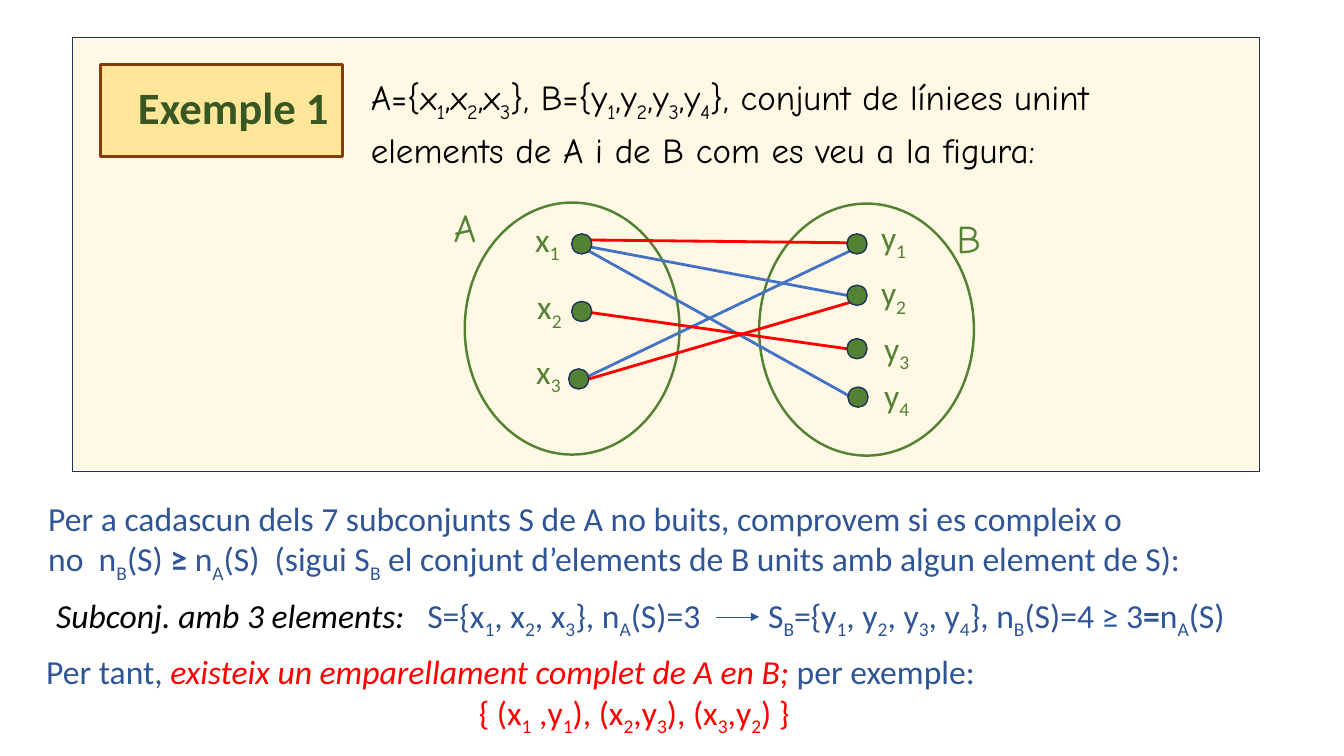
from lxml import etree
from pptx import Presentation
from pptx.dml.color import RGBColor
from pptx.enum.shapes import MSO_CONNECTOR as Conn, MSO_SHAPE as Kind
from pptx.enum.text import MSO_ANCHOR as Anchor, MSO_AUTO_SIZE as Fit, PP_ALIGN as Align
from pptx.oxml.ns import qn
from pptx.util import Pt

PX = 9144
BLACK = RGBColor(0x00, 0x00, 0x00)
RED = RGBColor(0xFF, 0x00, 0x00)
BLUE = RGBColor(0x44, 0x72, 0xC4)
NAVY = RGBColor(0x1E, 0x32, 0x56)
INK = RGBColor(0x2F, 0x55, 0x97)
GREEN = RGBColor(0x54, 0x82, 0x35)
DARK = RGBColor(0x38, 0x57, 0x23)
CREAM = RGBColor(0xFF, 0xF2, 0xCC)
GOLD = RGBColor(0xFF, 0xE6, 0x99)
BROWN = RGBColor(0x84, 0x3C, 0x0B)

BODY = {"name": "Calibri", "size": Pt(24)}
PLAIN = {**BODY, "color": INK}
SLANT = {**BODY, "color": BLACK, "italic": True}
BOLD = {**PLAIN, "bold": True}
PROOF = {**BODY, "color": RED}
CLAIM = {**PROOF, "italic": True}
MARK = {**BODY, "color": GREEN}
NAME = {"name": "Comic Neue", "size": Pt(28), "color": GREEN}
TASK = {"name": "Comic Neue", "size": Pt(25), "color": BLACK}
HEAD = {"name": "Calibri", "size": Pt(32), "color": DARK, "bold": True}


def emu(*nums):
    """Turn px lengths into EMU."""
    return [round(n * PX) for n in nums]


def add_run(para, text, form, base=0):
    """Add one run with its format."""
    if not text:
        return
    run = para.add_run()
    run.text = text
    for key, val in form.items():
        if key == "color":
            run.font.color.rgb = val
        else:
            setattr(run.font, key, val)
    if base:
        run.font._element.set("baseline", str(base))


def add_rich(para, parts):
    """Write (text, format) parts; the sign after each underscore is lowered."""
    for text, form in parts:
        first, *rest = text.split("_")
        add_run(para, first, form)
        for bit in rest:
            add_run(para, bit[0], form, -25000)
            add_run(para, bit[1:], form)


def add_text(slide, box, paras, wrap=True, fit=Fit.SHAPE_TO_FIT_TEXT):
    """Place a text box and return its paragraphs."""
    frame = slide.shapes.add_textbox(*emu(*box)).text_frame
    frame.word_wrap = wrap
    frame.auto_size = fit
    for num, parts in enumerate(paras):
        para = frame.add_paragraph() if num else frame.paragraphs[0]
        add_rich(para, parts)
    return frame.paragraphs


def indent(para, left):
    """Set the left indent of a paragraph."""
    para._p.get_or_add_pPr().set("marL", str(left * PX))


def add_tabs(para, stops):
    """Set the tab stops of a paragraph."""
    tabs = etree.SubElement(para._p.get_or_add_pPr(), qn("a:tabLst"))
    for stop in stops:
        etree.SubElement(tabs, qn("a:tab"), pos=str(stop * PX), algn="l")


def add_form(slide, kind, box, fill, line, width):
    """Draw a preset shape."""
    form = slide.shapes.add_shape(kind, *emu(*box))
    form.shadow.inherit = False
    if fill is None:
        form.fill.background()
    else:
        form.fill.solid()
        form.fill.fore_color.rgb = fill
    form.line.color.rgb = line
    form.line.width = Pt(width)
    return form


def add_line(slide, ends, color, width, arrow=False):
    """Draw a straight line, with an arrowhead if asked."""
    line = slide.shapes.add_connector(Conn.STRAIGHT, *emu(*ends))
    line.line.color.rgb = color
    line.line.width = Pt(width)
    if arrow:
        etree.SubElement(line.line._get_or_add_ln(), qn("a:tailEnd"), type="triangle")
    etree.SubElement(line._element.spPr, qn("a:effectLst"))


def add_title(slide, box):
    """Draw the title plate."""
    plate = add_form(slide, Kind.RECTANGLE, box, GOLD, BROWN, 2)
    frame = plate.text_frame
    frame.vertical_anchor = Anchor.MIDDLE
    para = frame.paragraphs[0]
    para.alignment = Align.LEFT
    para.line_spacing = 0.9
    indent(para, 27)
    add_rich(para, [("Exemple 1", HEAD)])


def add_task(slide, box):
    """Write the statement of the example."""
    paras = [
        [("A={x_1,x_2,x_3}, B={y_1,y_2,y_3,y_4}, conjunt de líniees unint", TASK)],
        [("elements de A i de B com es veu a la figura:", TASK)],
    ]
    for para in add_text(slide, box, paras, fit=Fit.NONE):
        para.line_spacing = 0.9
        para.space_before = Pt(10)


def add_graph(slide, box):
    """Draw the two sets and the lines between them."""
    left, top = box[:2]
    sets = [
        ("A", (0, 0), (21, 4), "x", [(137, 45), (137, 112), (134, 179)],
         [(81, 15), (83, 82), (82, 146)]),
        ("B", (499, 11), (313, 5), "y", [(410, 45), (410, 96), (410, 149), (411, 197)],
         [(424, 13), (424, 68), (427, 123), (427, 170)]),
    ]
    edges = [
        (137, 41, 416, 44, RED), (140, 47, 400, 96, BLUE), (144, 52, 417, 204, BLUE),
        (140, 178, 403, 52, BLUE), (144, 179, 403, 103, RED), (138, 112, 400, 149, RED),
    ]
    for name, spot, oval, sign, dots, marks in sets:
        add_form(slide, Kind.OVAL, (left + oval[0], top + oval[1], 213, 250), None, GREEN, 1.75)
        add_text(slide, (left + spot[0], top + spot[1], 47, 57), [[(name, NAME)]], False)
        for num, (x, y) in enumerate(marks, 1):
            add_text(slide, (left + x, top + y, 46, 50), [[(f"{sign}_{num}", MARK)]], False)
    for x, y, far, low, color in edges:
        add_line(slide, (left + x, top + y, left + far, top + low), color, 2)
    for *_, dots, marks in sets:
        for x, y in dots:
            add_form(slide, Kind.OVAL, (left + x - 10, top + y - 10, 20, 20), GREEN, NAVY, 1)


def add_panel(slide, box):
    """Draw the example panel with its parts."""
    left, top = box[:2]
    panel = add_form(slide, Kind.RECTANGLE, box, CREAM, NAVY, 1)
    tint = panel._element.spPr.find(qn("a:solidFill"))[0]
    etree.SubElement(tint, qn("a:alpha"), val="50000")
    add_graph(slide, (left + 368, top + 160, 544, 255))
    add_title(slide, (left + 28, top + 27, 240, 91))
    add_task(slide, (left + 286, top + 34, 903, 124))


def add_notes(slide, box):
    """Write the check and the result below the panel."""
    left, top, wide = box[:3]
    check = [
        [("Per a cadascun dels 7 subconjunts S de A no buits, comprovem si es compleix o", PLAIN)],
        [("no  n_B(S) ", PLAIN), ("≥ ", BOLD),
         ("n_A(S)  (sigui S_B el conjunt d’elements de B units amb algun element de S):", PLAIN)],
    ]
    for para in add_text(slide, (left, top, wide, 91), check):
        indent(para, 8)
    case = [[
        ("Subconj. amb 3 elements:\t", SLANT),
        ("S={x_1, x_2, x_3}, n_A(S)=3\tS_B={y_1, y_2, y_3, y_4}, n_B(S)=4 ≥ 3", PLAIN),
        ("=", BOLD), ("n_A(S)", PLAIN),
    ]]
    line, = add_text(slide, (left + 16, top + 96, 1226, 50), case)
    add_tabs(line, (368, 706))
    add_line(slide, (left + 680, top + 123, left + 723, top + 123), INK, 0.5, True)
    result = [
        [("Per tant, ", PLAIN), ("existeix un emparellament complet de A en B; ", CLAIM),
         ("per exemple:", PLAIN)],
        [("{ (x_1 ,y_1), (x_2,y_3), (x_3,y_2) }", PROOF)],
    ]
    pair = add_text(slide, (left + 6, top + 152, 1029, 91), result)[1]
    indent(pair, 429)


def main():
    """Build the slide and save it."""
    deck = Presentation()
    deck.slide_width, deck.slide_height = emu(1333, 750)
    slide = deck.slides.add_slide(deck.slide_layouts[6])
    add_panel(slide, (72, 37, 1177, 431))
    add_notes(slide, (30, 489, 1303, 243))
    deck.save("out.pptx")


if __name__ == "__main__":
    main()
